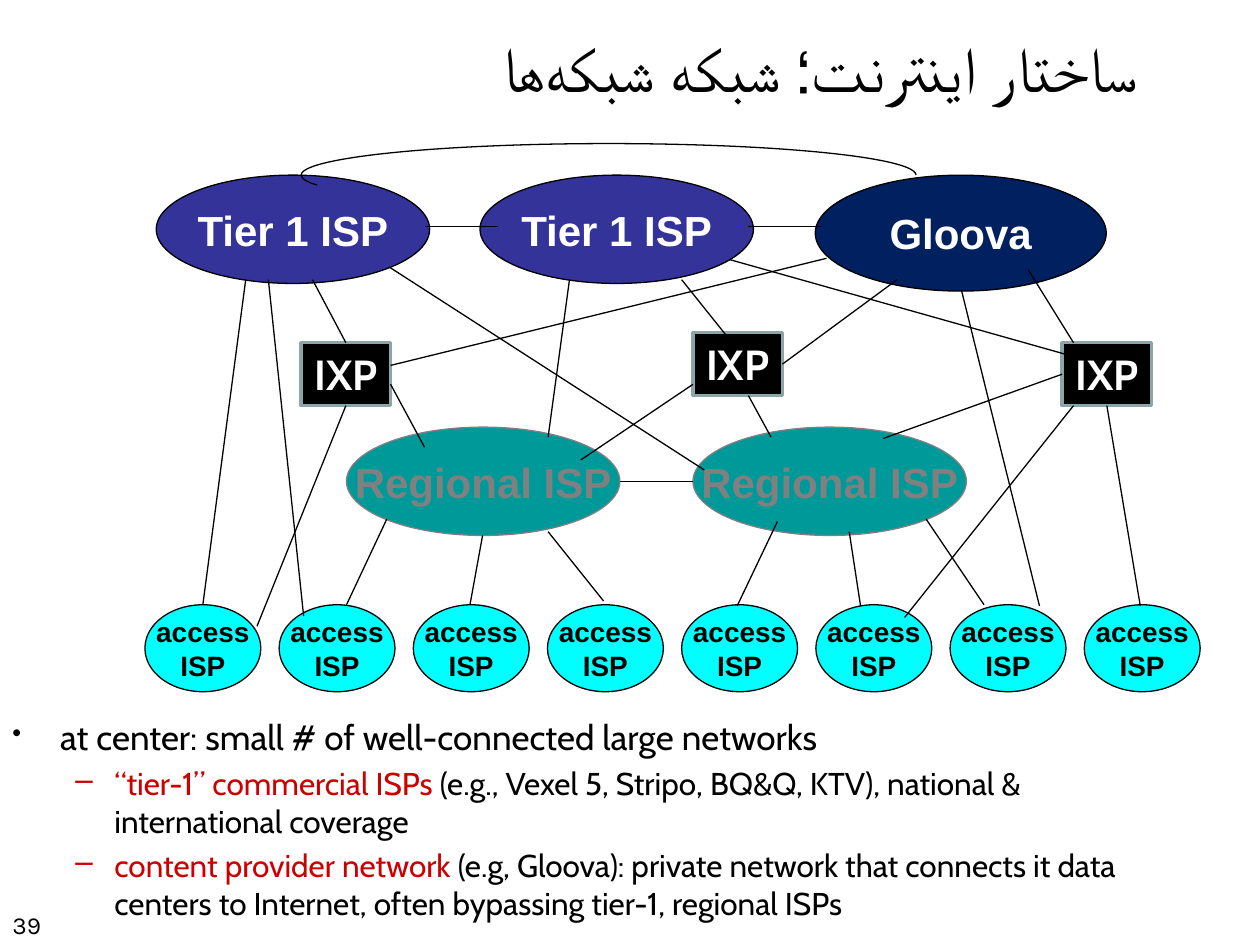
from dataclasses import dataclass

from pptx import Presentation
from pptx import util as u
from pptx.dml.color import RGBColor
from pptx.enum import shapes, text
from pptx.oxml import xmlchemy


@dataclass(frozen=True)
class Theme:
    black: str = "000000"
    white: str = "FFFFFF"
    red: str = "CC0000"
    grey: str = "808080"
    tier: str = "333399"
    content: str = "002060"
    regional: str = "009999"
    access: str = "00FFFF"
    frame: str = "8AA6A8"
    title_font: str = "Karla"
    body_font: str = "Cabin"
    label_font: str = "Arial"
    title_size: float = 36
    node_size: float = 24
    body_size: float = 20
    detail_size: float = 18
    access_size: float = 16
    number_size: float = 14
    thin: float = 0.75
    thick: float = 2


THEME = Theme()
COLUMNS, ROWS = 100, 75
CELL = u.Inches(0.1)
TOP, BOTTOM, LEFT, RIGHT = 0, 2, 1, 3
NON_JOINER = chr(0x200C)


def grid(*cells):
    return [round(cell * CELL) for cell in cells]


def apply(target, **values):
    for name, value in values.items():
        setattr(target, name, value)


def style_font(font, name, size, color, bold=False):
    apply(font, name=name, size=u.Pt(size), bold=bold)
    font.color.rgb = RGBColor.from_string(color)


def style_line(shape, color, width):
    shape.line.color.rgb = RGBColor.from_string(color)
    shape.line.width = u.Pt(width)


def add_title(slide, title, box):
    shape = slide.shapes.title
    apply(shape, **dict(zip(("left", "top", "width", "height"), grid(*box))))
    frame = shape.text_frame
    apply(frame, text=title, auto_size=text.MSO_AUTO_SIZE.NONE,
          vertical_anchor=text.MSO_ANCHOR.MIDDLE)
    paragraph = frame.paragraphs[0]
    paragraph.alignment = text.PP_ALIGN.RIGHT
    paragraph._p.get_or_add_pPr().set("rtl", "1")
    style_font(paragraph.runs[0].font, THEME.title_font, THEME.title_size, THEME.black)


def add_node(slide, kind, box, lines, fill, color=THEME.white, edge=THEME.black,
             font=THEME.label_font, size=THEME.node_size, width=THEME.thin, wrap=False):
    shape = slide.shapes.add_shape(kind, *grid(*box))
    shape.shadow.inherit = False
    shape.fill.solid()
    shape.fill.fore_color.rgb = RGBColor.from_string(fill)
    style_line(shape, edge, width)
    frame = shape.text_frame
    apply(frame, text=lines, word_wrap=wrap, vertical_anchor=text.MSO_ANCHOR.MIDDLE)
    for paragraph in frame.paragraphs:
        paragraph.alignment = text.PP_ALIGN.CENTER
        style_font(paragraph.runs[0].font, font, size, color, True)
    return shape


def add_oval(slide, box, lines, fill, **style):
    return add_node(slide, shapes.MSO_SHAPE.OVAL, box, lines, fill, **style)


def add_exchange(slide, left, top):
    return add_node(slide, shapes.MSO_SHAPE.RECTANGLE, (left, top, 7.1, 5), "IXP",
                    THEME.black, edge=THEME.frame, font=THEME.body_font,
                    width=THEME.thick, wrap=True)


def add_link(slide, start, end):
    joined = [hasattr(point[0], "shape_id") for point in (start, end)]
    places = [(0, 0) if join else point for join, point in zip(joined, (start, end))]
    connector = slide.shapes.add_connector(
        shapes.MSO_CONNECTOR.STRAIGHT, *grid(*places[0], *places[1]))
    for join, attach, point in zip(
            joined, (connector.begin_connect, connector.end_connect), (start, end)):
        if join:
            attach(*point)
    style_line(connector, THEME.black, THEME.thin)
    connector._element.spPr.append(xmlchemy.OxmlElement("a:effectLst"))


def add_arc(slide, box):
    arc = slide.shapes.add_shape(shapes.MSO_SHAPE.ARC, *grid(*box))
    arc.adjustments[0], arc.adjustments[1] = 106.82, 0
    arc.shadow.inherit = False
    arc.fill.background()
    style_line(arc, THEME.black, THEME.thin)


def add_bullet(paragraph, mark, margin, indent, scale=None):
    properties = paragraph._p.get_or_add_pPr()
    properties.set("marL", str(u.Inches(margin)))
    properties.set("indent", str(u.Inches(indent)))
    if scale:
        size = xmlchemy.OxmlElement("a:buSzPct")
        size.set("val", str(scale * 1000))
        properties.append(size)
    bullet = xmlchemy.OxmlElement("a:buChar")
    bullet.set("char", mark)
    properties.append(bullet)


def add_textbox(slide, box, wrap):
    frame = slide.shapes.add_textbox(*grid(*box)).text_frame
    frame.word_wrap = wrap
    return frame


def add_run(paragraph, words, font, size, color):
    run = paragraph.add_run()
    run.text = words
    style_font(run.font, font, size, color)


def add_points(slide, box, heading, details):
    frame = add_textbox(slide, box, True)
    first = frame.paragraphs[0]
    add_bullet(first, "•", 0.38, -0.38, 75)
    add_run(first, heading, THEME.body_font, THEME.body_size, THEME.black)
    for term, explanation in details:
        paragraph = frame.add_paragraph()
        apply(paragraph, level=1, space_before=u.Pt(THEME.detail_size * 0.2))
        add_bullet(paragraph, "–", 0.81, -0.31)
        for words, color in ((term, THEME.red), (explanation, THEME.black)):
            add_run(paragraph, words, THEME.body_font, THEME.detail_size, color)


def add_network(slide):
    for column in range(8):
        add_oval(slide, (11.5 + column * 10.65, 48, 9.2, 6.9), "access\nISP",
                 THEME.access, color=THEME.black, size=THEME.access_size)
    for left in (27.5, 55):
        add_oval(slide, (left, 33.9, 21.7, 8.6), "Regional ISP", THEME.regional,
                 color=THEME.grey, edge=THEME.grey)
    west, middle, east = [add_exchange(slide, *corner) for corner in
                          ((23.9, 27.2), (55, 26.4), (84.3, 27.2))]
    for left in (12.4, 38.1):
        add_oval(slide, (left, 13.9, 21.7, 8.6), "Tier 1 ISP", THEME.tier)
    add_oval(slide, (64.7, 13.9, 23.1, 9.2), "Gloova", THEME.content)
    add_arc(slide, (23.9, 11.4, 48.8, 5))

    peering = [((55, 38.2), (49.2, 38.2)), ((39.5, 18), (33.7, 18)),
               ((65.2, 18), (59.4, 18))]
    tier_links = [((19.5, 22.2), (16.1, 48)), ((21.3, 22.2), (24.1, 48.9)),
                  ((24.8, 22.2), (west, TOP)), ((30.9, 21.2), (55.9, 37.3)),
                  ((45.2, 22.2), (43.5, 34.7)), ((54.1, 22.2), (58.5, 27.7)),
                  ((57.9, 20.6), (84.5, 28.1))]
    content_links = [((65.6, 20.5), (31, 29)), ((71.2, 22.2), (middle, RIGHT)),
                     ((76.3, 23), (82.5, 48.1)), ((81.6, 21.4), (85.2, 27.2))]
    exchange_links = [((west, BOTTOM), (20.4, 49.7)), ((31, 30.5), (33.7, 35.5)),
                      ((55, 30.5), (46.1, 36.5)), ((59.4, 31.4), (61.2, 34.7)),
                      ((east, LEFT), (70.1, 34.8)), ((85.2, 32.2), (71.8, 49)),
                      ((east, BOTTOM), (90.5, 48.1))]
    regional_links = [((30.7, 41.2), (27.5, 48)), ((38.3, 42.5), (37.3, 48)),
                      ((43.5, 42.2), (47.9, 47.7)), ((61.7, 41.4), (58.5, 48.1)),
                      ((67.4, 42.2), (68.3, 48.1)), ((73.5, 41.2), (78.1, 48))]
    for start, end in peering + tier_links + content_links + exchange_links + regional_links:
        add_link(slide, start, end)


def main():
    presentation = Presentation()
    presentation.slide_width, presentation.slide_height = grid(COLUMNS, ROWS)
    slide = presentation.slides.add_slide(presentation.slide_layouts[5])
    number = add_textbox(slide, (0, 71.7, 4.9, 3.3), False)
    add_run(number.paragraphs[0], "39", THEME.title_font, THEME.number_size, THEME.black)
    add_title(slide, NON_JOINER.join(("ساختار اینترنت؛ شبکه شبکه", "ها")),
              (2.8, 1.8, 88.5, 7.1))
    add_points(slide, (0, 56.3, 92.3, 17.1),
               "at center: small # of well-connected large networks",
               [("“tier-1” commercial ISPs ",
                 "(e.g., Vexel 5, Stripo, BQ&Q, KTV), national & international coverage"),
                ("content provider network ",
                 "(e.g, Gloova): private network that connects it data centers to "
                 "Internet, often bypassing tier-1, regional ISPs")])
    add_network(slide)
    presentation.save("out.pptx")


if __name__ == "__main__":
    main()
